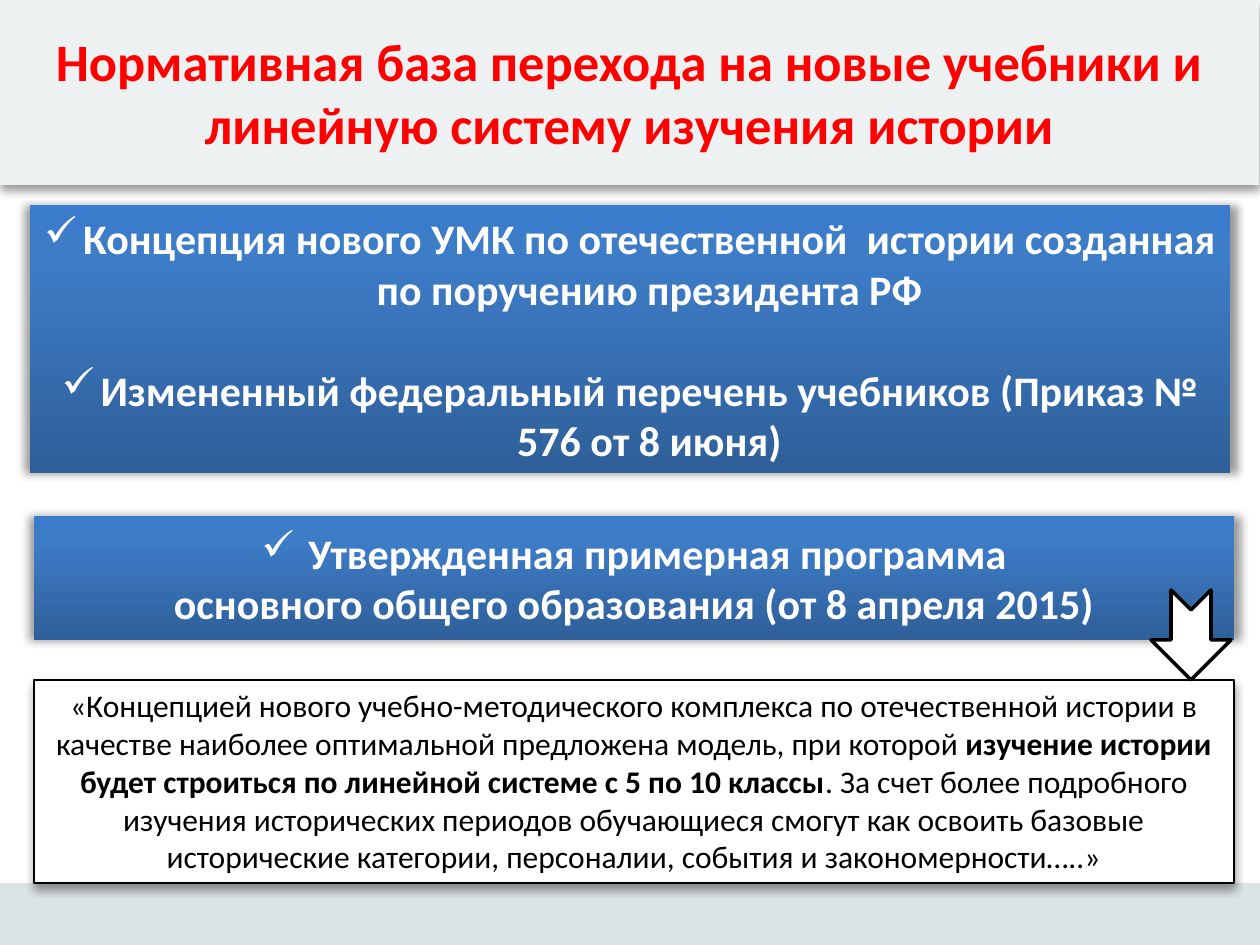
from lxml.etree import SubElement
from pptx import Presentation
from pptx.dml.color import RGBColor
from pptx.enum.shapes import MSO_SHAPE
from pptx.enum.text import MSO_ANCHOR, PP_ALIGN
from pptx.oxml import parse_xml
from pptx.oxml.ns import nsdecls, qn
from pptx.util import Emu, Pt

SCALE = 914400 / 126
COLOURS = {
    "red": "FF0000", "white": "FFFFFF", "black": "000000",
    "header": "EEF1F2", "footer": "DBE3E5",
    "blue_dark": "2F5F99", "blue_mid": "3D7CC7", "blue_light": "3A7CCB",
}
GRADIENT = [(0, "blue_dark"), (80, "blue_mid"), (100, "blue_light")]
SIDE_SHADOW = {"dist": 0, "dir": 0, "sx": 101000, "algn": "ctr"}
DROP_SHADOW = {"dist": Pt(3), "dir": 5400000, "algn": "ctr"}

deck = Presentation()
deck.slide_width = Emu(round(1260 * SCALE))
deck.slide_height = Emu(round(945 * SCALE))
page = deck.slides.add_slide(deck.slide_layouts[6])


def add_box(kind, place, fill, line=0, shadow=None):
    box = page.shapes.add_shape(kind, *[Emu(round(value * SCALE)) for value in place])
    box.shadow.inherit = False
    if fill == "gradient":
        stops = "".join(
            f'<a:gs pos="{at * 1000}"><a:srgbClr val="{COLOURS[name]}"/></a:gs>'
            for at, name in GRADIENT
        )
        box.fill.background()
        blank = box._element.spPr.find(qn("a:noFill"))
        blank.addprevious(parse_xml(
            f'<a:gradFill {nsdecls("a")} rotWithShape="1"><a:gsLst>{stops}</a:gsLst>'
            '<a:lin ang="16200000" scaled="0"/></a:gradFill>'
        ))
        box._element.spPr.remove(blank)
    else:
        box.fill.solid()
        box.fill.fore_color.rgb = RGBColor.from_string(COLOURS[fill])
    if line:
        box.line.color.rgb = RGBColor.from_string(COLOURS["black"])
        box.line.width = Pt(line)
    else:
        box.line.fill.background()
    if shadow:
        effects = box._element.spPr.find(qn("a:effectLst"))
        outer = SubElement(effects, qn("a:outerShdw"), blurRad=str(Pt(5)), rotWithShape="0")
        for name, value in shadow.items():
            outer.set(name, str(value))
        colour = SubElement(outer, qn("a:srgbClr"), val=COLOURS["black"])
        SubElement(colour, qn("a:alpha"), val="40000")
    return box


def write_text(box, paragraphs, size, colour, anchor=MSO_ANCHOR.MIDDLE, indent=0, gap=0):
    frame = box.text_frame
    frame.word_wrap = True
    frame.vertical_anchor = anchor
    for index, (bullet, spans) in enumerate(paragraphs):
        para = frame.add_paragraph() if index else frame.paragraphs[0]
        para.alignment = PP_ALIGN.CENTER
        if index and gap:
            para.space_before = Pt(gap)
        if indent:
            properties = para._p.get_or_add_pPr()
            hang = round(indent * SCALE)
            properties.set("marL", str(hang))
            properties.set("indent", str(-hang))
            if bullet:
                SubElement(properties, qn("a:buChar"), char="✓")
        for words, bold in spans:
            span = para.add_run()
            span.text = words
            span.font.color.rgb = RGBColor.from_string(COLOURS[colour])
            for name, value in {"name": "Calibri", "size": Pt(size), "bold": bold}.items():
                setattr(span.font, name, value)


header = add_box(MSO_SHAPE.RECTANGLE, (0, 0, 1259, 185), "header", shadow=DROP_SHADOW)
write_text(header, [
    (False, [("Нормативная база перехода на новые учебники и линейную систему изучения истории", True)]),
], 30, "red")

add_box(MSO_SHAPE.RECTANGLE, (0, 883, 1260, 62), "footer")

concept = add_box(MSO_SHAPE.RECTANGLE, (30, 205, 1200, 268), "gradient", shadow=SIDE_SHADOW)
write_text(concept, [
    (True, [("Концепция нового УМК по отечественной  истории созданная по поручению президента РФ", True)]),
    (True, [("Измененный федеральный перечень учебников (Приказ № 576 от 8 июня)", True)]),
], 24, "white", indent=39, gap=29)

quote = add_box(MSO_SHAPE.RECTANGLE, (34, 680, 1200, 203), "white", 0.75, DROP_SHADOW)
write_text(quote, [
    (False, [
        ("«Концепцией нового учебно-методического комплекса по отечественной истории в качестве "
         "наиболее оптимальной предложена модель, при которой ", False),
        ("изучение истории будет строиться по линейной системе с 5 по 10 классы", True),
        (". За счет более подробного изучения исторических периодов обучающиеся смогут как освоить "
         "базовые исторические категории, персоналии, события и закономерности…..»", False),
    ]),
], 18, "black", MSO_ANCHOR.TOP)

programme = add_box(MSO_SHAPE.RECTANGLE, (34, 516, 1200, 124), "gradient", shadow=SIDE_SHADOW)
write_text(programme, [
    (True, [("Утвержденная примерная программа", True)]),
    (False, [("основного общего образования (от 8 апреля 2015)", True)]),
], 24, "white", indent=47)

arrow = add_box(MSO_SHAPE.NOTCHED_RIGHT_ARROW, (1146, 595, 90, 80), "white", 2)
arrow.rotation = 90

deck.save("out.pptx")
